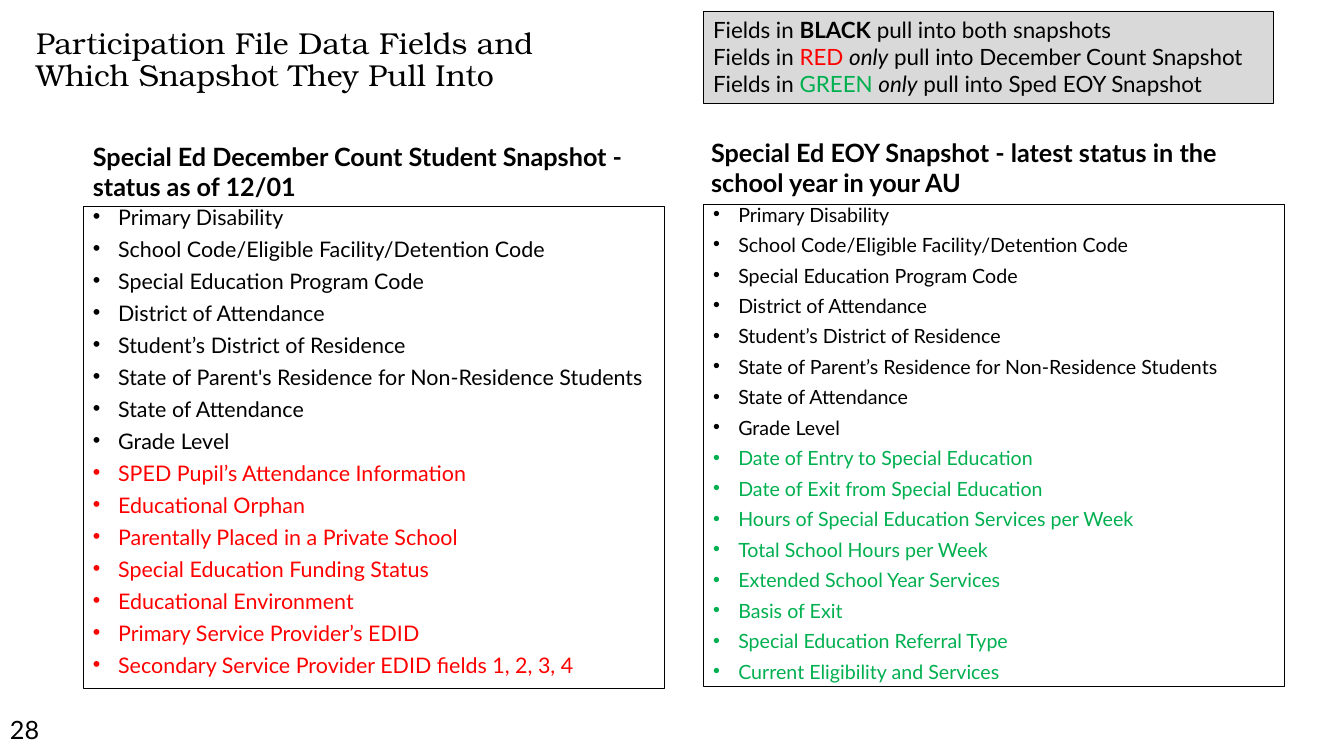
from dataclasses import dataclass

from lxml import etree
from pptx import Presentation
from pptx.dml.color import RGBColor
from pptx.enum.shapes import MSO_SHAPE
from pptx.enum.text import MSO_ANCHOR, MSO_AUTO_SIZE, PP_ALIGN
from pptx.oxml.ns import qn
from pptx.util import Emu, Inches, Pt

RECTANGLE = MSO_SHAPE.RECTANGLE
TOP = MSO_ANCHOR.TOP
NO_AUTOFIT = MSO_AUTO_SIZE.NONE
LEFT = PP_ALIGN.LEFT
PX_PER_INCH = 100.8
TITLE_ONLY = 5


@dataclass(frozen=True)
class Theme:
    """Colours, fonts and type sizes of the slide."""

    black: str = "000000"
    red: str = "FF0000"
    green: str = "00B050"
    grey: str = "D9D9D9"
    body_font: str = "Lato"
    title_font: str = "TeX Gyre Bonum"
    title_size: float = 21.6
    heading_size: float = 18
    legend_size: float = 16
    december_size: float = 15.3
    eoy_size: float = 14
    border: float = 0.25


THEME = Theme()

TITLE = "Participation File Data Fields and\vWhich Snapshot They Pull Into"
LEGEND = [
    [("Fields in ", THEME.black, ""), ("BLACK", THEME.black, "bold"),
     (" pull into both snapshots", THEME.black, "")],
    [("Fields in ", THEME.black, ""), ("RED ", THEME.red, ""),
     ("only", THEME.black, "italic"),
     (" pull into December Count Snapshot", THEME.black, "")],
    [("Fields in ", THEME.black, ""), ("GREEN ", THEME.green, ""),
     ("only", THEME.black, "italic"),
     (" pull into Sped EOY Snapshot", THEME.black, "")],
]


def shared_fields(apostrophe):
    """Return the fields that pull into both snapshots."""
    return [
        "Primary Disability",
        "School Code/Eligible Facility/Detention Code",
        "Special Education Program Code",
        "District of Attendance",
        "Student’s District of Residence",
        f"State of Parent{apostrophe}s Residence for Non-Residence Students",
        "State of Attendance",
        "Grade Level",
    ]


DECEMBER_FIELDS = [
    "SPED Pupil’s Attendance Information",
    "Educational Orphan",
    "Parentally Placed in a Private School",
    "Special Education Funding Status",
    "Educational Environment",
    "Primary Service Provider’s EDID",
    "Secondary Service Provider EDID fields 1, 2, 3, 4",
]
EOY_FIELDS = [
    "Date of Entry to Special Education",
    "Date of Exit from Special Education",
    "Hours of Special Education Services per Week",
    "Total School Hours per Week",
    "Extended School Year Services",
    "Basis of Exit",
    "Special Education Referral Type",
    "Current Eligibility and Services",
]


def px(n):
    """Convert pixels to EMU."""
    return Emu(round(n * Inches(1) / PX_PER_INCH))


def style(font, size, color=THEME.black, name=THEME.body_font):
    """Set the face, size and colour of a font."""
    font.name = name
    font.size = Pt(size)
    font.color.rgb = RGBColor.from_string(color)


def add_title(s, text, box):
    """Place and format the title placeholder."""
    sp = s.shapes.title
    sp.left, sp.top, sp.width, sp.height = map(px, box)
    tf = sp.text_frame
    tf.text = text
    tf.word_wrap = True
    tf.auto_size = NO_AUTOFIT
    tf.vertical_anchor = TOP
    tf.margin_left = tf.margin_right = tf.margin_top = tf.margin_bottom = 0
    p = tf.paragraphs[0]
    p.alignment = LEFT
    p.line_spacing = 0.9
    for r in p.runs:
        style(r.font, THEME.title_size, name=THEME.title_font)


def add_text(s, text, box, bold=False):
    """Add a plain text box."""
    tf = s.shapes.add_textbox(*map(px, box)).text_frame
    tf.word_wrap = True
    tf.text = text
    r = tf.paragraphs[0].runs[0]
    style(r.font, THEME.heading_size)
    r.font.bold = bold


def add_frame(s, box, fill=None):
    """Add a thinly bordered rectangle and return its text frame."""
    sp = s.shapes.add_shape(RECTANGLE, *map(px, box))
    sp.shadow.inherit = False
    if fill:
        sp.fill.solid()
        sp.fill.fore_color.rgb = RGBColor.from_string(fill)
    else:
        sp.fill.background()
    sp.line.color.rgb = RGBColor.from_string(THEME.black)
    sp.line.width = Pt(THEME.border)
    tf = sp.text_frame
    tf.word_wrap = True
    tf.vertical_anchor = TOP
    return tf


def add_legend(s, lines, box):
    """Add the colour key with its mixed formatting."""
    tf = add_frame(s, box, THEME.grey)
    tf.text = "\n".join("" for _ in lines)
    for p, parts in zip(tf.paragraphs, lines):
        p.alignment = LEFT
        for text, color, emphasis in parts:
            r = p.add_run()
            r.text = text
            style(r.font, THEME.legend_size, color)
            r.font.bold = emphasis == "bold"
            r.font.italic = emphasis == "italic"


def set_bullet(p):
    """Give a paragraph a hanging round bullet."""
    pPr = p._p.get_or_add_pPr()
    pPr.set("marL", str(Inches(0.25)))
    pPr.set("indent", str(-Inches(0.25)))
    etree.SubElement(pPr, qn("a:buFont")).set("typeface", "Arial")
    etree.SubElement(pPr, qn("a:buChar")).set("char", "•")


def add_field_list(s, shared, own, color, size, box):
    """Add a framed list of shared fields followed by coloured ones."""
    tf = add_frame(s, box)
    tf.text = "\n".join(shared + own)
    for i, p in enumerate(tf.paragraphs):
        set_bullet(p)
        p.alignment = LEFT
        p.line_spacing = 0.7
        p.space_before = Pt(10 if i else 0)
        style(p.runs[0].font, size, THEME.black if i < len(shared) else color)


def main():
    """Build the slide and save it."""
    prs = Presentation()
    prs.slide_width, prs.slide_height = Inches(13.33), Inches(7.5)
    s = prs.slides.add_slide(prs.slide_layouts[TITLE_ONLY])
    add_title(s, TITLE, (36, 28, 618, 72))
    add_field_list(s, shared_fields("’"), EOY_FIELDS, THEME.green,
                   THEME.eoy_size, (703, 204, 581, 482))
    add_text(s, "28", (0, 709, 302, 40))
    add_field_list(s, shared_fields("'"), DECEMBER_FIELDS, THEME.red,
                   THEME.december_size, (83, 206, 581, 482))
    add_text(s, "Special Ed December Count Student Snapshot - status as of 12/01",
             (83, 136, 581, 72), bold=True)
    add_text(s, "Special Ed EOY Snapshot - latest status in the school year in your AU",
             (701, 132, 572, 102), bold=True)
    add_legend(s, LEGEND, (703, 11, 570, 92))
    prs.save("out.pptx")


if __name__ == "__main__":
    main()
